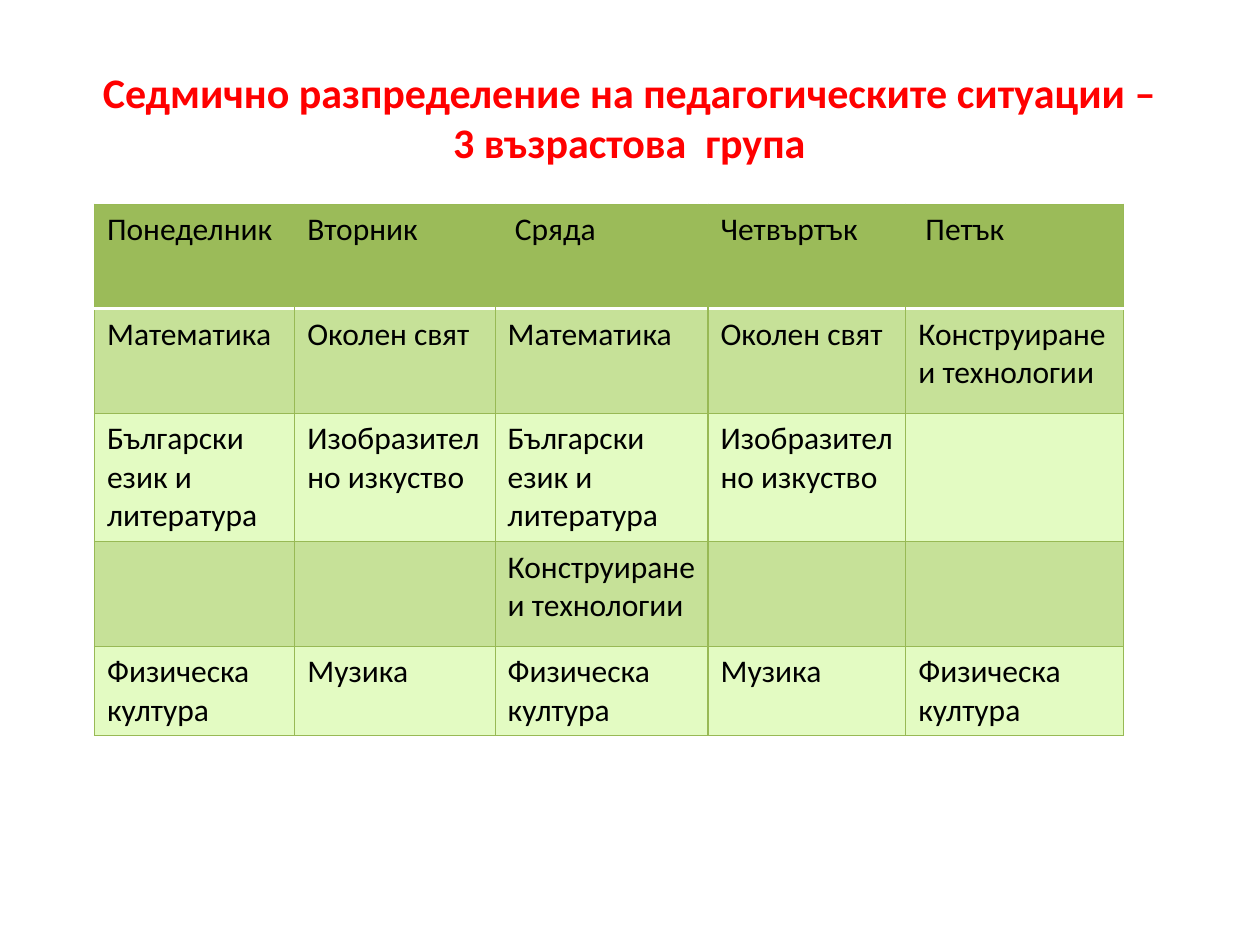
from dataclasses import dataclass

from lxml.etree import SubElement
from pptx import Presentation
from pptx.dml.color import RGBColor as RGB
from pptx.enum.text import MSO_ANCHOR, PP_ALIGN
from pptx.oxml.ns import qn
from pptx.util import Inches, Pt


@dataclass(frozen=True)
class Theme:
    font: str = "Calibri"
    title_size: int = 24
    cell_size: int = 18
    title: str = "FF0000"
    text: str = "000000"
    header: str = "9BBB59"
    bands: tuple = ("C6E198", "E3FBC2")
    border: str = "98B955"
    rule: str = "FFFFFF"
    border_width: float = 0.75
    rule_width: float = 2


THEME = Theme()
TITLE = "Седмично разпределение на педагогическите ситуации – 3 възрастова  група"

# Subjects, and the schedule by weekday; a newline starts a new paragraph
MATH, NATURE, MUSIC = "Математика", "Околен свят", "Музика"
LANGUAGE, ART = "Български език и литература", "Изобразително изкуство"
BUILDING, SPORT = "Конструиране и технологии", "Физическа култура"
SCHEDULE = [
    ["Понеделник", "Вторник", " Сряда", "Четвъртък", " Петък"],
    [MATH, NATURE, MATH, NATURE, BUILDING],
    [LANGUAGE, ART, LANGUAGE, ART, ""],
    ["", "", BUILDING, "", ""],
    [SPORT, MUSIC, SPORT, MUSIC, "Физическа\nкултура"],
]
COL_WIDTHS = [1.59, 1.59, 1.69, 1.57, 1.73]
ROW_HEIGHTS = [0.83, 0.83, 1.02, 0.83, 0.71]


def style_font(font, size, color, bold=False):
    font.name, font.size, font.bold = THEME.font, Pt(size), bold
    font.color.rgb = RGB.from_string(color)


def set_border(cell, side, color, width):
    ln = SubElement(cell._tc.get_or_add_tcPr(), qn(f"a:ln{side}"), w=str(Pt(width)))
    fill = SubElement(ln, qn("a:solidFill"))
    SubElement(fill, qn("a:srgbClr"), val=color)


def border_cell(cell, row, col, last_col):
    """Green grid, no dividers in the header, white rule below it."""
    green = (THEME.border, THEME.border_width)
    hidden = (THEME.header, THEME.border_width)
    rule = (THEME.rule, THEME.rule_width)
    set_border(cell, "L", *(hidden if row == 0 and col > 0 else green))
    set_border(cell, "R", *(hidden if row == 0 and col < last_col else green))
    set_border(cell, "T", *(rule if row == 1 else green))
    set_border(cell, "B", *(rule if row == 0 else green))


def fill_cell(cell, text, color):
    cell.fill.solid()
    cell.fill.fore_color.rgb = RGB.from_string(color)
    tf = cell.text_frame
    for i, line in enumerate(text.split("\n")):
        p = tf.add_paragraph() if i else tf.paragraphs[0]
        if line:
            r = p.add_run()
            r.text = line
            style_font(r.font, THEME.cell_size, THEME.text)
        else:
            p.font.size = Pt(THEME.cell_size)


def add_title(slide, left, top, width, height):
    sp = slide.shapes.title
    sp.left, sp.top, sp.width, sp.height = map(Inches, (left, top, width, height))
    tf = sp.text_frame
    tf.word_wrap = True
    tf.vertical_anchor = MSO_ANCHOR.MIDDLE
    p = tf.paragraphs[0]
    p.alignment = PP_ALIGN.CENTER
    r = p.add_run()
    r.text = TITLE
    style_font(r.font, THEME.title_size, THEME.title, bold=True)


def add_schedule(slide, left, top, width, height):
    table = slide.shapes.add_table(
        len(SCHEDULE), len(COL_WIDTHS), *map(Inches, (left, top, width, height))
    ).table
    # Columns and rows share the box in proportion
    for column, share in zip(table.columns, COL_WIDTHS):
        column.width = Inches(width * share / sum(COL_WIDTHS))
    for row, share in zip(table.rows, ROW_HEIGHTS):
        row.height = Inches(height * share / sum(ROW_HEIGHTS))
    # Header row, then alternating bands
    for i, texts in enumerate(SCHEDULE):
        color = THEME.bands[(i - 1) % 2] if i else THEME.header
        for j, text in enumerate(texts):
            cell = table.cell(i, j)
            border_cell(cell, i, j, len(texts) - 1)
            fill_cell(cell, text, color)


def main():
    prs = Presentation()
    prs.slide_width, prs.slide_height = Inches(10), Inches(7.5)
    slide = prs.slides.add_slide(prs.slide_layouts[5])
    add_title(slide, 0.62, 0.3, 8.75, 1.25)
    add_schedule(slide, 0.75, 1.62, sum(COL_WIDTHS), sum(ROW_HEIGHTS))
    prs.save("out.pptx")


if __name__ == "__main__":
    main()
